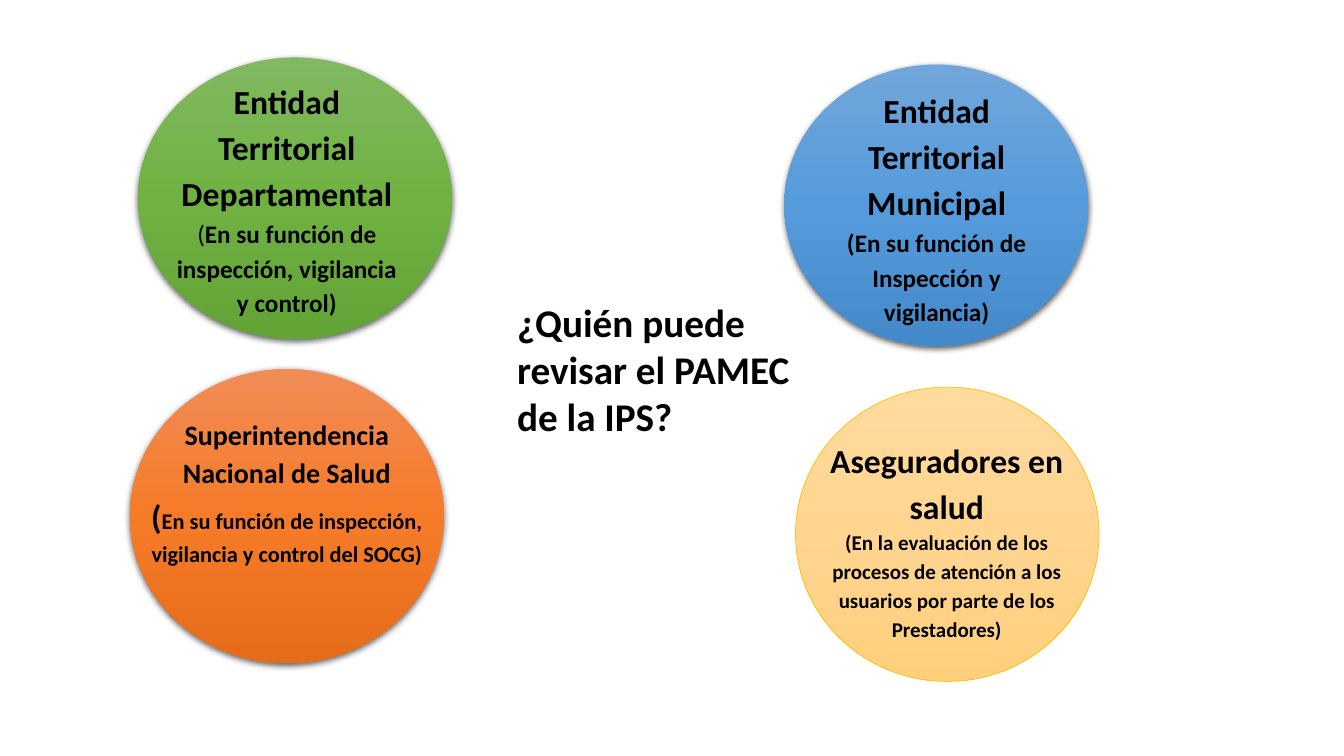
from copy import deepcopy
from dataclasses import dataclass

from lxml import etree
from pptx import Presentation
from pptx.dml.color import RGBColor
from pptx.enum.shapes import MSO_SHAPE
from pptx.enum.text import MSO_ANCHOR, PP_ALIGN
from pptx.oxml.ns import qn
from pptx.util import Inches, Pt

OVAL = MSO_SHAPE.OVAL
TOP = MSO_ANCHOR.TOP
LEFT = PP_ALIGN.LEFT
CENTER = PP_ALIGN.CENTER


@dataclass(frozen=True)
class Theme:
    font: str = "Calibri"
    ink: str = "000000"
    gold: str = "FFC000"
    green: tuple = ("81B861", "6FB242", "62A336")
    blue: tuple = ("71A6DB", "559BDB", "448ACA")
    orange: tuple = ("F18C57", "F67B28", "E56C19")
    cream: tuple = ("FFDB9E", "FFD590", "FFD07C")
    title: int = 28
    head: int = 24
    office: int = 20
    body: int = 18
    small: int = 16
    tiny: int = 15


def add_run(para, text, size, font, color, bold=True):
    run = para.add_run()
    run.text = text
    run.font.size = Pt(size)
    run.font.name = font
    run.font.bold = bold
    run.font.color.rgb = RGBColor.from_string(color)


class Painter:
    def __init__(self, slide, theme):
        self.slide = slide
        self.theme = theme

    def oval(self, box, tones, line=None):
        shape = self.slide.shapes.add_shape(OVAL, *map(Inches, box))
        shape.fill.gradient()
        shape.fill.gradient_angle = 270
        stops = shape.element.spPr.find(".//" + qn("a:gsLst"))
        stops.append(deepcopy(stops[0]))
        for index, (stop, tone) in enumerate(zip(shape.fill.gradient_stops, tones)):
            stop.position = index / 2
            stop.color.rgb = RGBColor.from_string(tone)
        shape.shadow.inherit = False
        if line:
            shape.line.color.rgb = RGBColor.from_string(line)
            shape.line.width = Pt(0.5)
        else:
            shape.line.fill.background()
            self.shade(shape)

    def shade(self, shape):
        effects = shape.element.spPr.find(qn("a:effectLst"))
        outer = etree.SubElement(
            effects, qn("a:outerShdw"), blurRad=str(Pt(4.5)), dist=str(Pt(1.5)),
            dir="5400000", algn="ctr", rotWithShape="0")
        color = etree.SubElement(outer, qn("a:srgbClr"), val=self.theme.ink)
        etree.SubElement(color, qn("a:alpha"), val="63000")

    def text(self, box, paras, align=CENTER, spacing=1.15):
        frame = self.slide.shapes.add_textbox(*map(Inches, box)).text_frame
        frame.word_wrap = True
        frame.vertical_anchor = TOP
        frame.margin_left = frame.margin_right = Inches(0.1)
        frame.margin_top = frame.margin_bottom = Inches(0.1)
        for index, runs in enumerate(paras):
            para = frame.add_paragraph() if index else frame.paragraphs[0]
            para.alignment = align
            para.line_spacing = spacing
            for text, size, *bold in runs:
                add_run(para, text, size, self.theme.font, self.theme.ink, *bold)


def main():
    deck = Presentation()
    deck.slide_width = Inches(13.33)
    deck.slide_height = Inches(7.5)
    theme = Theme()
    paint = Painter(deck.slides.add_slide(deck.slide_layouts[6]), theme)

    paint.text((5.03, 2.86, 3.01, 1.6),
               [[("¿Quién puede revisar el PAMEC de la IPS?", theme.title)]],
               align=LEFT, spacing=1.0)

    paint.oval((1.37, 0.57, 3.11, 2.79), theme.green)
    paint.text((1.59, 0.64, 2.51, 2.3), [
        [("Entidad Territorial Departamental", theme.head)],
        [("(", theme.body, False),
         ("En su función de inspección, vigilancia y control)", theme.body)],
    ])

    paint.oval((7.78, 0.64, 3.01, 2.79), theme.blue)
    paint.text((8.2, 0.73, 2.18, 2.24), [
        [("Entidad Territorial Municipal", theme.head)],
        [("(En su función de Inspección y vigilancia)", theme.body)],
    ])

    paint.oval((1.29, 3.66, 3.11, 2.92), theme.orange)
    paint.text((1.29, 3.99, 3.11, 2.35), [
        [("Superintendencia Nacional de Salud", theme.office)],
        [("(", theme.head),
         ("En su función de inspección, vigilancia y control del SOCG)", theme.small)],
    ])

    paint.oval((7.89, 3.84, 3.01, 2.92), theme.cream, line=theme.gold)
    paint.text((8.09, 4.2, 2.6, 2.35), [
        [("Aseguradores en salud", theme.head)],
        [("(En la evaluación de los procesos de atención a los usuarios "
          "por parte de los Prestadores)", theme.tiny)],
    ])

    deck.save("out.pptx")


if __name__ == "__main__":
    main()
